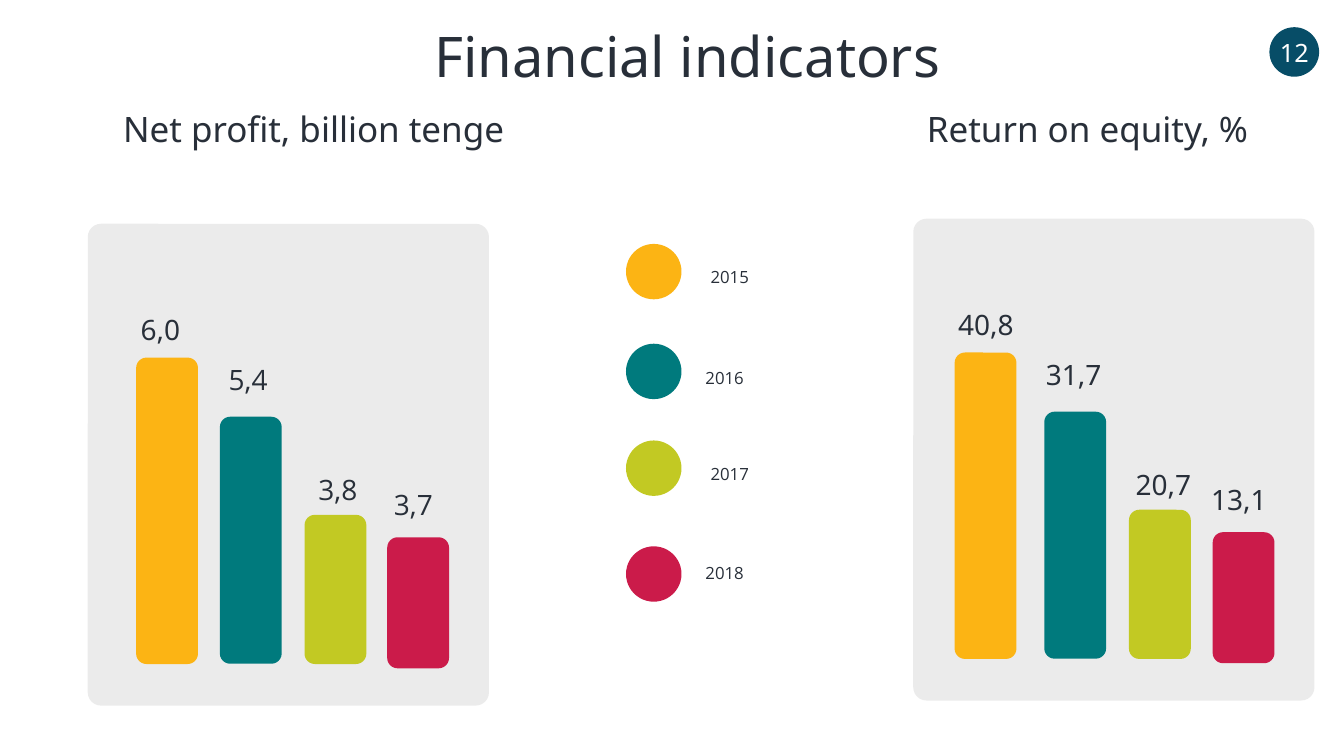
from collections import namedtuple

from lxml import etree
from pptx import Presentation
from pptx import util as u
from pptx.dml.color import RGBColor
from pptx.enum import shapes, text
from pptx.oxml.ns import qn

# Grid: 100 columns by 100 rows over the whole slide
WIDTH, HEIGHT = u.Inches(13.33), u.Inches(7.5)
COLUMN, ROW = WIDTH / 100, HEIGHT / 100

INK = RGBColor(0x28, 0x2F, 0x39)
WHITE = RGBColor(0xFF, 0xFF, 0xFF)
NAVY = RGBColor(0x07, 0x4D, 0x67)
PANEL_GREY = RGBColor(0xBF, 0xBF, 0xBF)
YELLOW = RGBColor(0xFC, 0xB4, 0x14)
TEAL = RGBColor(0x00, 0x7A, 0x7D)
LIME = RGBColor(0xC2, 0xC9, 0x23)
CRIMSON = RGBColor(0xCB, 0x1B, 0x4A)

NOTO, OPEN = "Noto Sans", "Open Sans"
ROUNDED = shapes.MSO_SHAPE.ROUNDED_RECTANGLE
OVAL = shapes.MSO_SHAPE.OVAL
CENTER, JUSTIFY = text.PP_ALIGN.CENTER, text.PP_ALIGN.JUSTIFY

# Bar and value places are measured from the panel's corner
Year = namedtuple("Year", "name color dot_top name_left name_top "
                          "bar_top bar_height value_left value_top value_width")
YEARS = [
    Year("2015", YELLOW, 32.27, 52.13, 34.67, 17.7, 40.53, 2.45, 11.13, 5.93),
    Year("2016", TEAL, 45.47, 51.75, 48, 25.53, 32.67, 7.77, 17.67, 8.33),
    Year("2017", LIME, 58.27, 52.13, 60.67, 38.5, 19.73, 14.45, 32.2, 8.33),
    Year("2018", CRIMSON, 72.27, 51.75, 73.73, 41.47, 17.33, 20.07, 34.27, 8.33),
]

Panel = namedtuple("Panel", "heading heading_left heading_width left top "
                            "bar_lefts values fonts")
PANELS = [
    Panel("Net profit, billion tenge", 3.45, 39.76, 6.53, 29.6,
          [3.6, 9.83, 16.13, 22.28], ["6,0", "5,4", "3,8", "3,7"],
          [NOTO, OPEN, OPEN, OPEN]),
    Panel("Return on equity, %", 63.39, 35.03, 67.95, 28.93,
          [3.08, 9.75, 16.05, 22.28], ["40,8", "31,7", "20,7", "13,1"],
          [NOTO] * 4),
]


def place(left, top, width, height):
    return (round(left * COLUMN), round(top * ROW),
            round(width * COLUMN), round(height * ROW))


def write(frame, wording, size, font=NOTO, color=INK, align=CENTER):
    line = frame.paragraphs[0]
    line.text = wording
    line.alignment = align
    line.font.size = u.Pt(size)
    line.font.name = font
    line.font.color.rgb = color


def add_label(slide, box, wording, size, font=NOTO, align=CENTER):
    frame = slide.shapes.add_textbox(*place(*box)).text_frame
    frame.word_wrap = True
    frame.auto_size = text.MSO_AUTO_SIZE.SHAPE_TO_FIT_TEXT
    write(frame, wording, size, font, align=align)


def add_block(slide, kind, box, color):
    block = slide.shapes.add_shape(kind, *place(*box))
    block.shadow.inherit = False
    block.fill.solid()
    block.fill.fore_color.rgb = color
    block.line.fill.background()
    return block


def set_opacity(block, percent):
    color = block.fill._xPr.find(qn("a:solidFill"))[0]
    etree.SubElement(color, qn("a:alpha"), val=str(percent * 1000))


def add_panel(slide, panel):
    add_label(slide, (panel.heading_left, 13.6, panel.heading_width, 6.93),
              panel.heading, 25)
    backdrop = add_block(slide, ROUNDED, (panel.left, panel.top, 29.85, 63.73),
                         PANEL_GREY)
    backdrop.adjustments[0] = 0.033
    set_opacity(backdrop, 30)
    for year, bar_left, value, font in zip(YEARS, panel.bar_lefts,
                                           panel.values, panel.fonts):
        add_block(slide, ROUNDED,
                  (panel.left + bar_left, panel.top + year.bar_top,
                   4.6, year.bar_height), year.color)
        add_label(slide, (panel.left + year.value_left,
                          panel.top + year.value_top,
                          year.value_width, 5.87), value, 20, font)


def add_legend(slide):
    for year in YEARS:
        add_block(slide, OVAL, (46.58, year.dot_top, 4.13, 7.33), year.color)
        add_label(slide, (year.name_left, year.name_top, 6.68, 4),
                  year.name, 12, OPEN, JUSTIFY)


def add_page_number(slide, number):
    badge = add_block(slide, OVAL, (94.45, 3.6, 3.7, 6.55), NAVY)
    badge.text_frame.word_wrap = False
    badge.text_frame.vertical_anchor = text.MSO_ANCHOR.MIDDLE
    write(badge.text_frame, number, 18, color=WHITE)


def main():
    deck = Presentation()
    deck.slide_width, deck.slide_height = WIDTH, HEIGHT
    slide = deck.slides.add_slide(deck.slide_layouts[6])

    # Title and page number
    add_label(slide, (25.43, 2.13, 51.39, 10.27), "Financial indicators", 40)
    add_page_number(slide, "12")

    # Bars on both sides, years between them
    for panel in PANELS:
        add_panel(slide, panel)
    add_legend(slide)

    deck.save("out.pptx")


if __name__ == "__main__":
    main()
